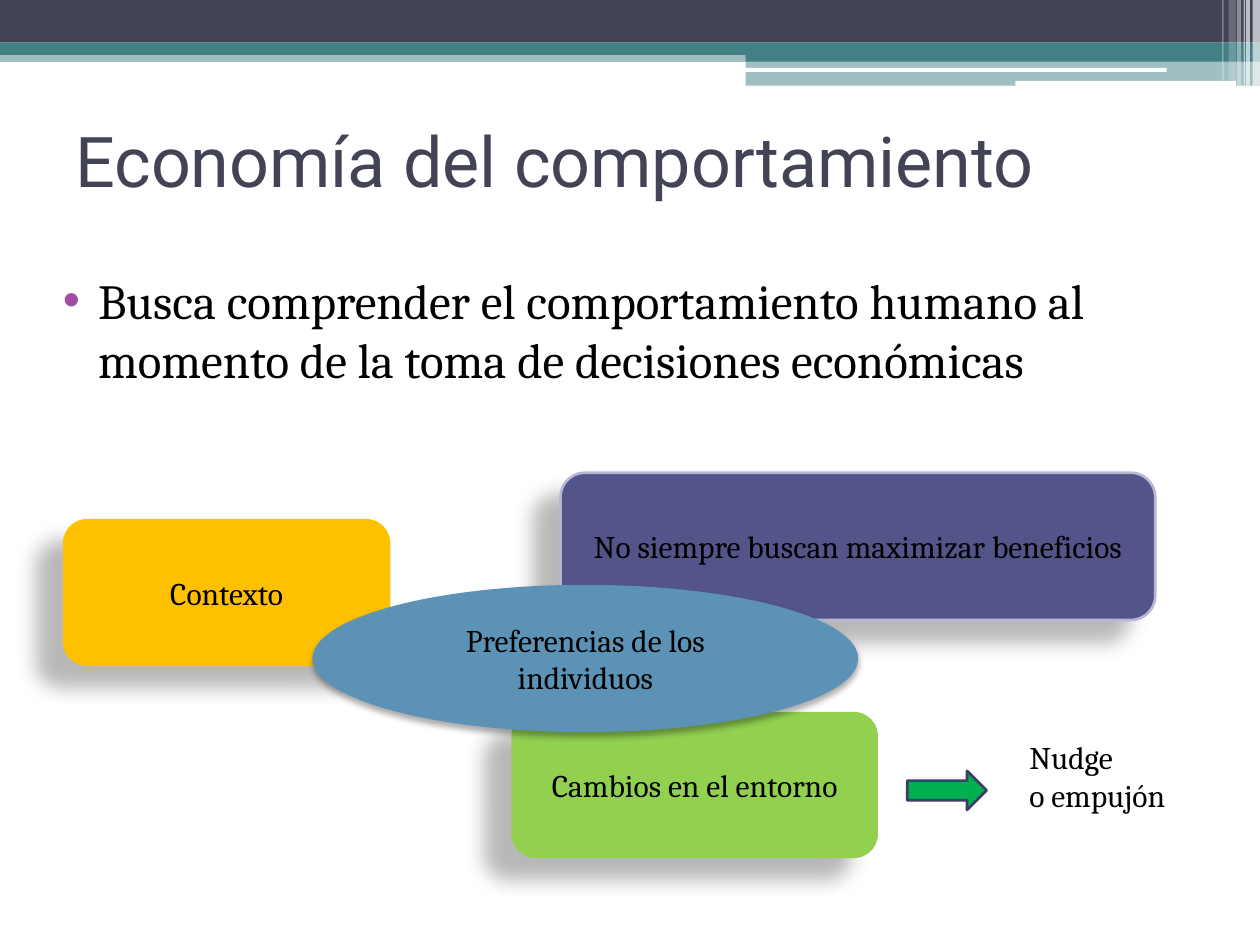
import pptx
import pptx.dml.color
import pptx.enum.shapes
import pptx.enum.text
import pptx.oxml.ns
import pptx.util
from lxml import etree

Cm = pptx.util.Cm
Pt = pptx.util.Pt
Kind = pptx.enum.shapes.MSO_SHAPE
Align = pptx.enum.text.PP_ALIGN
Anchor = pptx.enum.text.MSO_ANCHOR
qn = pptx.oxml.ns.qn

INK, TEAL, WHITE = "424456", "438086", "FFFFFF"
# Shadows: opacity %, blur pt, distance pt, angle
DEEP = (28, 11.8, 19.7, 141)
SOFT = (32, 3.5, 2.2, 90)


def color(code):
    return pptx.dml.color.RGBColor.from_string(code)


def add(node, tag, **attrs):
    return etree.SubElement(node, qn(tag), {k: str(v) for k, v in attrs.items()})


class Deck:
    font = "Cambria"
    size = 18

    def __init__(self, wide, high):
        self.file = pptx.Presentation()
        self.file.slide_width, self.file.slide_height = Cm(wide), Cm(high)
        self.slide = self.file.slides.add_slide(self.file.slide_layouts[6])

    def shape(self, kind, box, fill, line=None, alpha=100):
        item = self.slide.shapes.add_shape(kind, *map(Cm, box))
        item.shadow.inherit = False
        item.fill.solid()
        item.fill.fore_color.rgb = color(fill)
        if alpha < 100:
            tone = item._element.spPr.find(qn("a:solidFill")).find(qn("a:srgbClr"))
            add(tone, "a:alpha", val=alpha * 1000)
        if line:
            item.line.color.rgb = color(line)
            item.line.width = Pt(1.5)
        else:
            item.line.fill.background()
        return item

    def shade(self, item, style):
        alpha, blur, dist, angle = style
        group = item._element.spPr.find(qn("a:effectLst"))
        outer = add(group, "a:outerShdw", blurRad=Pt(blur), dist=Pt(dist),
                    dir=angle * 60000, algn="ctr", rotWithShape=0)
        add(add(outer, "a:srgbClr", val="000000"), "a:alpha", val=alpha * 1000)

    def label(self, frame, lines, size=None, font=None, ink="000000", align=Align.LEFT):
        frame.word_wrap = True
        frame.text = "\n".join(lines)
        for para in frame.paragraphs:
            para.alignment = align
            para.font.size = Pt(size or self.size)
            para.font.name = font or self.font
            para.font.color.rgb = color(ink)

    def node(self, kind, box, fill, text, style, line=None):
        item = self.shape(kind, box, fill, line)
        self.shade(item, style)
        item.text_frame.vertical_anchor = Anchor.MIDDLE
        self.label(item.text_frame, [text], align=Align.CENTER)

    def text(self, box, *lines, anchor=Anchor.TOP, **style):
        frame = self.slide.shapes.add_textbox(*map(Cm, box)).text_frame
        frame.vertical_anchor = anchor
        self.label(frame, lines, **style)
        return frame

    def bullet(self, para, tint, left, hang):
        para.space_before = Pt(3)
        props = para._p.get_or_add_pPr()
        props.set("marL", str(Cm(left)))
        props.set("indent", str(-Cm(hang)))
        # Bullet marks must come before the default run style
        base = props.find(qn("a:defRPr"))
        add(add(props, "a:buClr"), "a:srgbClr", val=tint)
        add(props, "a:buFont", typeface="Arial")
        add(props, "a:buChar", char="•")
        if base is not None:
            props.append(base)


def main():
    deck = Deck(25.4, 19.05)

    # Header bands
    for kind, box, fill, alpha in (
        (Kind.RECTANGLE, (0, 1.02, 25.4, 0.23), TEAL, 50),
        (Kind.RECTANGLE, (0, 0, 25.4, 0.86), INK, 100),
        (Kind.RECTANGLE, (0, 0.86, 25.4, 0.25), TEAL, 100),
        (Kind.RECTANGLE, (15.03, 0.99, 10.37, 0.25), TEAL, 100),
        (Kind.RECTANGLE, (15.03, 1.23, 10.37, 0.5), TEAL, 50),
        (Kind.ROUNDED_RECTANGLE, (15.01, 1.37, 8.51, 0.08), WHITE, 100),
        (Kind.ROUNDED_RECTANGLE, (20.47, 1.63, 4.45, 0.1), WHITE, 100),
    ):
        deck.shape(kind, box, fill, alpha=alpha)

    # Pale strips at the right edge
    for left, wide, high, alpha in (
        (25.25, 0.15, 1.73, 65), (25.12, 0.08, 1.73, 65), (25.07, 0.03, 1.73, 60),
        (24.94, 0.08, 1.73, 40), (24.77, 0.15, 1.63, 20), (24.64, 0.03, 1.63, 30),
    ):
        deck.shape(Kind.RECTANGLE, (left, 0, wide, high), WHITE, alpha=alpha)

    # Title and main point
    deck.text((1.27, 1.73, 22.86, 2.97), "Economía del comportamiento",
              anchor=Anchor.MIDDLE, size=40, font="Roboto", ink=INK)
    body = deck.text((0.71, 5.33, 23.83, 2.97),
                     "Busca comprender el comportamiento humano al momento "
                     "de la toma de decisiones económicas", size=28)
    deck.bullet(body.paragraphs[0], "A04DA3", 1.02, 0.71)

    # Boxes around the central oval
    for box, fill, text, line in (
        ((10.31, 14.35, 7.39, 2.95), "92D050", "Cambios en el entorno", None),
        ((11.3, 9.53, 11.99, 2.97), "53548A", "No siempre buscan maximizar beneficios", "B7B7D4"),
        ((1.27, 10.46, 6.6, 2.97), "FFC000", "Contexto", None),
    ):
        deck.node(Kind.ROUNDED_RECTANGLE, box, fill, text, DEEP, line)
    deck.node(Kind.OVAL, (6.3, 11.79, 11, 2.97), "5C92B5",
              "Preferencias de los individuos", SOFT)

    # Outcome
    deck.shape(Kind.RIGHT_ARROW, (18.29, 15.54, 1.6, 0.79), "00B050", "3D3E66")
    deck.text((20.5, 14.76, 4.6, 1.8), "Nudge", "o empujón")

    deck.file.save("out.pptx")


if __name__ == "__main__":
    main()
